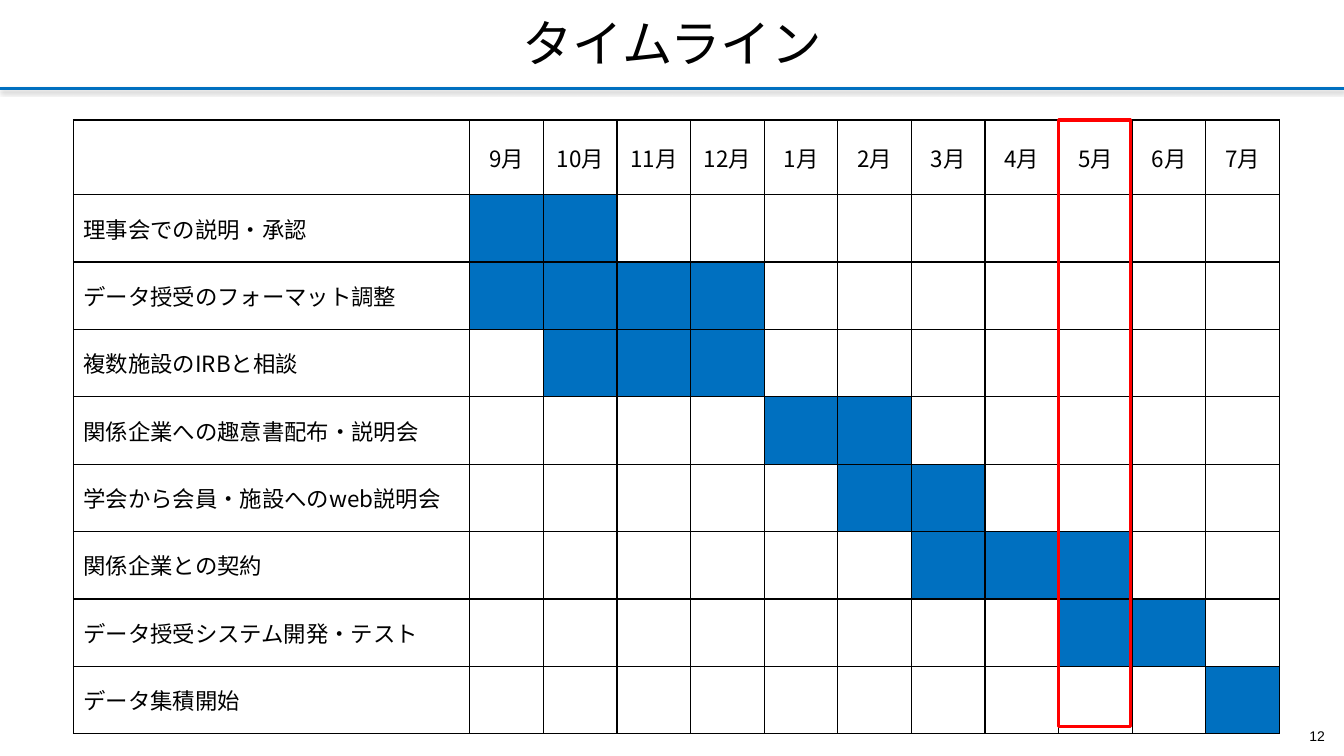
from dataclasses import dataclass

from lxml import etree
from pptx import Presentation
from pptx.dml.color import RGBColor
from pptx.enum.shapes import MSO_CONNECTOR, MSO_SHAPE
from pptx.enum.text import MSO_ANCHOR, PP_ALIGN
from pptx.oxml.ns import qn
from pptx.util import Inches, Pt

LEFT, MID, RIGHT = PP_ALIGN.LEFT, PP_ALIGN.CENTER, PP_ALIGN.RIGHT
TOP, HALF = MSO_ANCHOR.TOP, MSO_ANCHOR.MIDDLE
RECT, LINE = MSO_SHAPE.RECTANGLE, MSO_CONNECTOR.STRAIGHT

WIDE, HIGH = 13.33, 7.5
BLACK, BLUE, RED = "000000", "0070C0", "FF0000"
SANS = "Noto Sans CJK JP"
GRID_X, GRID_Y = 0.73, 1.19
NAME_W, COL_W, ROW_H = 3.93, 0.73, 6.02 / 9
MONTHS = [9, 10, 11, 12, 1, 2, 3, 4, 5, 6, 7]
NOW = 5


@dataclass
class Task:
    name: str
    start: int
    end: int


@dataclass
class Label:
    text: str
    x: float
    y: float
    w: float
    h: float
    size: int
    font: str
    align: PP_ALIGN
    frame: dict
    space: float


TASKS = [
    Task("理事会での説明・承認", 9, 10),
    Task("データ授受のフォーマット調整", 9, 12),
    Task("複数施設のIRBと相談", 10, 12),
    Task("関係企業への趣意書配布・説明会", 1, 2),
    Task("学会から会員・施設へのweb説明会", 2, 3),
    Task("関係企業との契約", 3, 5),
    Task("データ授受システム開発・テスト", 5, 6),
    Task("データ集積開始", 7, 7),
]

LABELS = [
    Label("タイムライン", 1.79, 0.14, 9.75, 0.56, 36, SANS, MID,
          {"word_wrap": True, "vertical_anchor": TOP}, 0.9),
    Label("12", 12.97, 7.14, 0.17, 0.33, 10, "Arial", RIGHT,
          {"word_wrap": False, "vertical_anchor": HALF,
           "margin_left": 0, "margin_right": 0}, 1.0),
]


def paint(code: str) -> RGBColor:
    return RGBColor.from_string(code)


def apply(item, values: dict) -> None:
    for key, value in values.items():
        setattr(item, key, value)


def write(frame, text: str, size: int, font: str, align: PP_ALIGN) -> None:
    para = frame.paragraphs[0]
    para.alignment = align
    run = para.add_run()
    run.text = text
    apply(run.font, {"size": Pt(size), "name": font, "bold": False})
    run.font.color.rgb = paint(BLACK)
    etree.SubElement(run.font._element, qn("a:ea"), typeface=font)


def add_label(slide, label: Label) -> None:
    box = slide.shapes.add_textbox(*map(Inches, (label.x, label.y, label.w, label.h)))
    apply(box.text_frame, label.frame)
    write(box.text_frame, label.text, label.size, label.font, label.align)
    box.text_frame.paragraphs[0].line_spacing = label.space


def add_edges(cell) -> None:
    props = cell._tc.get_or_add_tcPr()
    for side in ("lnL", "lnR", "lnT", "lnB"):
        edge = etree.SubElement(props, qn(f"a:{side}"), w=str(Pt(1)))
        fill = etree.SubElement(edge, qn("a:solidFill"))
        etree.SubElement(fill, qn("a:srgbClr"), val=BLACK)


def add_chart_grid(slide) -> None:
    rows, cols = len(TASKS) + 1, len(MONTHS) + 1
    size = NAME_W + COL_W * len(MONTHS), ROW_H * rows
    table = slide.shapes.add_table(
        rows, cols, *map(Inches, (GRID_X, GRID_Y, *size))).table
    apply(table, {"first_row": False, "horz_banding": False})
    for index, col in enumerate(table.columns):
        col.width = Inches(COL_W if index else NAME_W)
    for row in table.rows:
        row.height = Inches(ROW_H)
        for cell in row.cells:
            add_edges(cell)
            cell.fill.background()
            cell.vertical_anchor = HALF
    for col, month in enumerate(MONTHS, 1):
        write(table.cell(0, col).text_frame, f"{month}月", 16, SANS, MID)
    for row, task in enumerate(TASKS, 1):
        write(table.cell(row, 0).text_frame, task.name, 16, SANS, LEFT)
        for col in range(MONTHS.index(task.start), MONTHS.index(task.end) + 1):
            fill = table.cell(row, col + 1).fill
            fill.solid()
            fill.fore_color.rgb = paint(BLUE)


def add_frame(slide) -> None:
    left = GRID_X + NAME_W + COL_W * MONTHS.index(NOW)
    high = ROW_H * (len(TASKS) + 1)
    box = slide.shapes.add_shape(RECT, *map(Inches, (left, GRID_Y, 0.71, high)))
    box.shadow.inherit = False
    box.fill.background()
    box.line.color.rgb = paint(RED)
    box.line.width = Pt(2.25)


def add_rule(slide) -> None:
    rule = slide.shapes.add_connector(LINE, *map(Inches, (0, 0.88, WIDE, 0.88)))
    rule.line.color.rgb = paint(BLUE)
    rule.line.width = Pt(2.25)
    glow = etree.SubElement(rule._element.spPr, qn("a:effectLst"))
    shade = etree.SubElement(
        glow, qn("a:outerShdw"), blurRad=str(Pt(3.1)), dist=str(Pt(1.6)),
        dir="5400000", rotWithShape="0")
    tint = etree.SubElement(shade, qn("a:srgbClr"), val=BLACK)
    etree.SubElement(tint, qn("a:alpha"), val="38000")


def main() -> None:
    deck = Presentation()
    apply(deck, {"slide_width": Inches(WIDE), "slide_height": Inches(HIGH)})
    slide = deck.slides.add_slide(deck.slide_layouts[6])
    add_chart_grid(slide)
    for label in LABELS:
        add_label(slide, label)
    add_frame(slide)
    add_rule(slide)
    deck.save("out.pptx")


if __name__ == "__main__":
    main()
